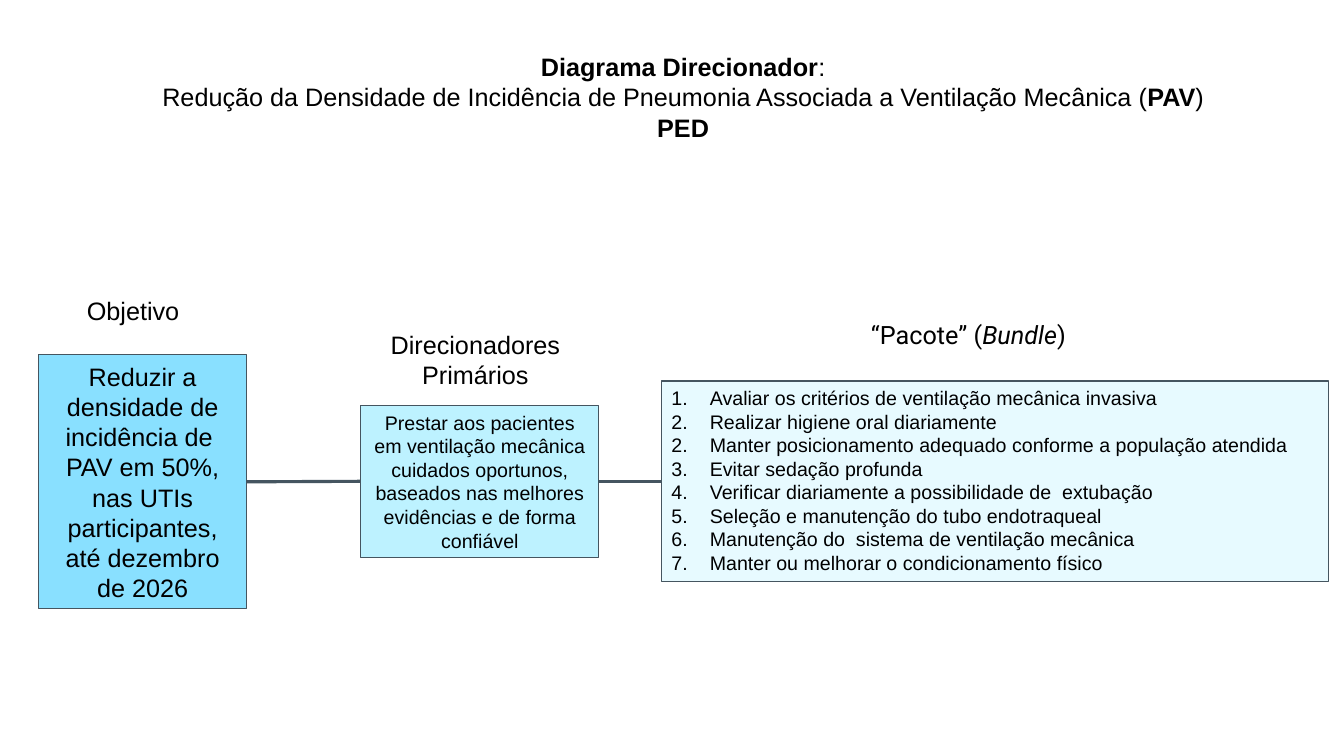
from dataclasses import dataclass

from lxml.etree import SubElement
from pptx import Presentation
from pptx.dml.color import RGBColor
from pptx.enum.shapes import MSO_CONNECTOR, MSO_SHAPE
from pptx.enum.text import MSO_ANCHOR, MSO_AUTO_SIZE, PP_ALIGN
from pptx.oxml.ns import qn
from pptx.util import Inches, Pt


@dataclass(frozen=True)
class Theme:
    ink: str = "000000"
    edge: str = "455560"
    goal: str = "89E0FF"
    driver: str = "BDF2FF"
    bundle: str = "E7FAFF"
    font: str = "Arial"
    accent: str = "Roboto"
    large: int = 18
    small: int = 14
    thin: float = 0.75
    thick: float = 2.25


THEME = Theme()

# A paragraph is a list of (text, style); style is "", "b" or "i".
TITLE = [
    [("Diagrama Direcionador", "b"), (":", "")],
    [("Redução da Densidade de Incidência de Pneumonia Associada a "
      "Ventilação Mecânica (", ""), ("PAV", "b"), (")", "")],
    [("PED", "b")],
]
TITLE_AT = (0.37, 0.46, 12.81, 1.01)

# Text, place, font
HEADS = [
    ([("Objetivo", "")], (0.38, 2.88, 1.88, 0.4), THEME.font),
    ([("Direcionadores Primários", "")], (3.46, 3.22, 2.51, 0.71), THEME.font),
    ([("“Pacote” (", ""), ("Bundle", "i"), (")", "")],
     (7.58, 3.12, 4.05, 0.4), THEME.accent),
]

# Text, place, fill, size
BOXES = [
    ("Reduzir a densidade de incidência de  PAV em 50%, nas UTIs "
     "participantes, até dezembro de 2026",
     (0.38, 3.52, 2.07, 2.52), THEME.goal, THEME.large),
    ("Prestar aos pacientes em ventilação mecânica cuidados oportunos, "
     "baseados nas melhores evidências e de forma confiável",
     (3.58, 4.02, 2.36, 1.51), THEME.driver, THEME.small),
]

# Equal neighbouring starts count on as one list.
BUNDLE = [
    (1, "Avaliar os critérios de ventilação mecânica invasiva"),
    (1, "Realizar higiene oral diariamente"),
    (2, "Manter posicionamento adequado conforme a população atendida"),
    (3, "Evitar sedação profunda"),
    (3, "Verificar diariamente a possibilidade de  extubação"),
    (5, "Seleção e manutenção do tubo endotraqueal"),
    (5, "Manutenção do  sistema de ventilação mecânica"),
    (5, "Manter ou melhorar o condicionamento físico"),
]
BUNDLE_AT = (6.56, 3.78, 6.62, 1.99)
INDENT = 0.38
JUSTIFY_FROM = 5
LEFT, RIGHT = 1, 3  # connection sites of a rectangle


def place(shape, at):
    shape.left, shape.top, shape.width, shape.height = map(Inches, at)


def paint(shape, fill):
    shape.fill.solid()
    shape.fill.fore_color.rgb = RGBColor.from_string(fill)
    shape.line.color.rgb = RGBColor.from_string(THEME.edge)
    shape.line.width = Pt(THEME.thin)


def setup(frame, anchor=MSO_ANCHOR.TOP):
    frame.word_wrap = True
    frame.auto_size = MSO_AUTO_SIZE.NONE
    frame.vertical_anchor = anchor


def write(frame, paras, size, font=THEME.font, align=PP_ALIGN.CENTER):
    for i, runs in enumerate(paras):
        para = frame.add_paragraph() if i else frame.paragraphs[0]
        para.alignment = align
        para.space_before = Pt(0)
        para.font.size = Pt(size)
        para.font.name = font
        para.font.color.rgb = RGBColor.from_string(THEME.ink)
        for text, style in runs:
            run = para.add_run()
            run.text = text
            if style == "b":
                run.font.bold = True
            elif style == "i":
                run.font.italic = True


def number(para, start):
    props = para._p.get_or_add_pPr()
    props.set("marL", str(Inches(INDENT)))
    props.set("indent", str(-Inches(INDENT)))
    mark = SubElement(props, qn("a:buAutoNum"), type="arabicPeriod")
    if start > 1:
        mark.set("startAt", str(start))


def fill_list(frame):
    for i, (start, text) in enumerate(BUNDLE):
        para = frame.add_paragraph() if i else frame.paragraphs[0]
        para.alignment = (PP_ALIGN.JUSTIFY if start >= JUSTIFY_FROM
                          else PP_ALIGN.LEFT)
        para.space_before = Pt(0)
        number(para, start)
        para.font.size = Pt(THEME.small)
        para.font.name = THEME.font
        para.font.color.rgb = RGBColor.from_string(THEME.ink)
        para.add_run().text = text


def link(slide, first, second):
    line = slide.shapes.add_connector(MSO_CONNECTOR.STRAIGHT, 0, 0, 0, 0)
    line.begin_connect(first, RIGHT)
    line.end_connect(second, LEFT)
    line.line.color.rgb = RGBColor.from_string(THEME.edge)
    line.line.width = Pt(THEME.thick)
    SubElement(line._element.spPr, qn("a:effectLst"))


def main():
    deck = Presentation()
    deck.slide_width, deck.slide_height = Inches(13.33), Inches(7.5)
    slide = deck.slides.add_slide(deck.slide_layouts[1])

    title = slide.shapes.title
    place(title, TITLE_AT)
    setup(title.text_frame)
    write(title.text_frame, TITLE, THEME.large)

    for runs, at, font in HEADS:
        head = slide.shapes.add_textbox(*map(Inches, at))
        setup(head.text_frame)
        write(head.text_frame, [runs], THEME.large, font)

    chain = []
    for text, at, fill, size in BOXES:
        box = slide.shapes.add_shape(MSO_SHAPE.RECTANGLE, *map(Inches, at))
        box.shadow.inherit = False
        paint(box, fill)
        setup(box.text_frame, MSO_ANCHOR.MIDDLE)
        write(box.text_frame, [[(text, "")]], size)
        chain.append(box)

    body = slide.placeholders[1]
    place(body, BUNDLE_AT)
    paint(body, THEME.bundle)
    setup(body.text_frame)
    fill_list(body.text_frame)
    chain.append(body)

    for first, second in zip(chain, chain[1:]):
        link(slide, first, second)

    deck.save("out.pptx")


if __name__ == "__main__":
    main()
